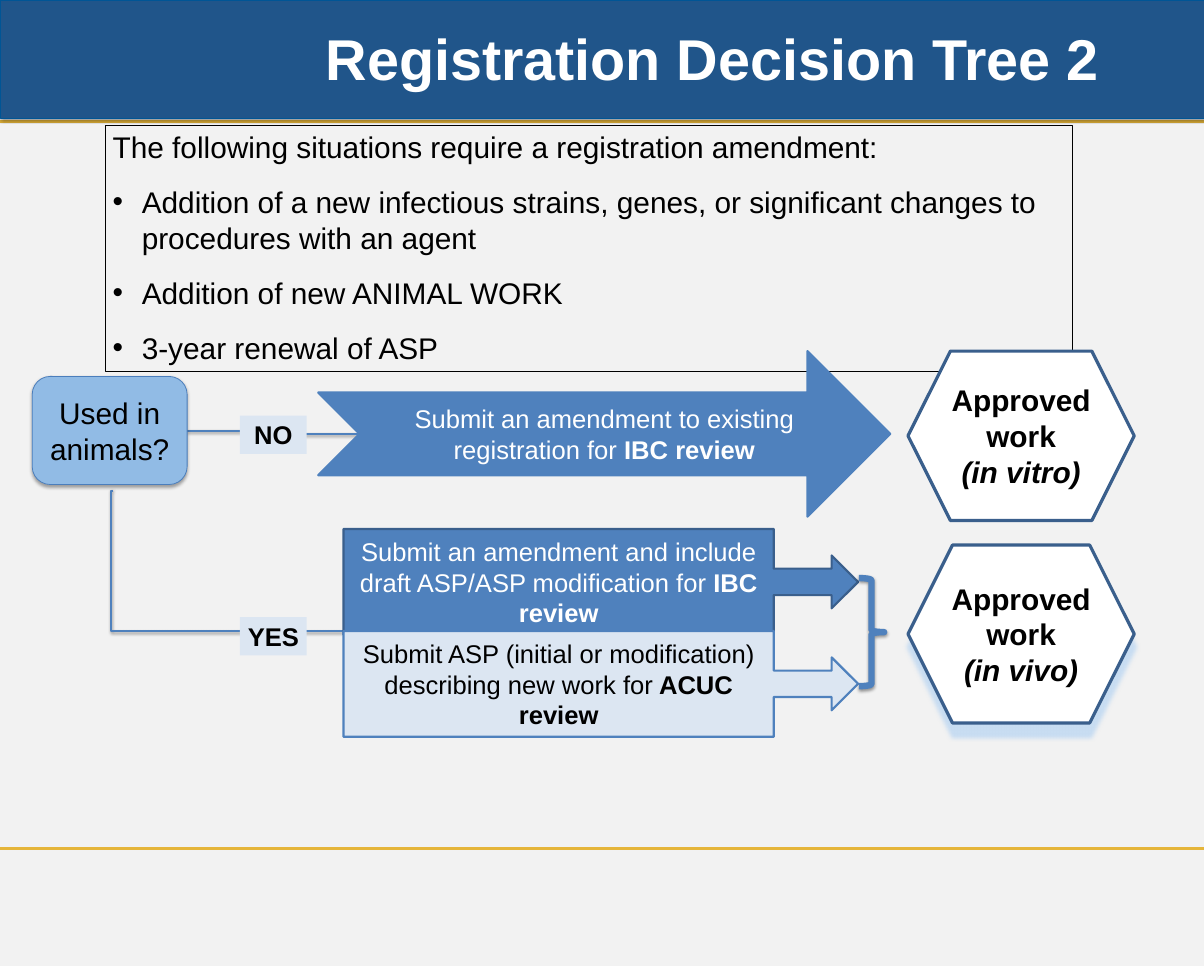
from lxml import etree
from pptx import Presentation
from pptx.dml.color import RGBColor
from pptx.enum import shapes, text
from pptx.oxml import ns
from pptx.util import Inches, Pt

KIND = shapes.MSO_SHAPE
CENTER = text.PP_ALIGN.CENTER
MIDDLE = text.MSO_ANCHOR.MIDDLE
BLUE, NAVY, PALE, GOLD = "4F81BD", "3A5F8C", "DCE6F2", "E5B53A"
SOFT = ("000000", 35, 3.1, 1.8)
LINE_SHADOW = ("000000", 38, 3.1, 1.6)
CALLOUT = (0.25, 0.25, 0.25, 0.836)


def rgb(code):
    return RGBColor.from_string(code)


def add_child(parent, tag, **attributes):
    child = etree.SubElement(parent, ns.qn(tag))
    for name, value in attributes.items():
        child.set(name, str(value))
    return child


def set_effects(item, shadow=None):
    """Give a shape its own effects: a downward (colour, opacity, blur, distance) or none."""
    effects = add_child(item._element.spPr, "a:effectLst")
    if shadow:
        color, opacity, blur, distance = shadow
        outer = add_child(effects, "a:outerShdw", blurRad=Pt(blur), dist=Pt(distance),
                          dir=5400000, algn="t", rotWithShape=0)
        add_child(add_child(outer, "a:srgbClr", val=color), "a:alpha", val=opacity * 1000)


def set_line(line, style):
    if style:
        line.color.rgb = rgb(style[0])
        line.width = Pt(style[1])
    else:
        line.fill.background()


def add_figure(page, kind, at, fill=None, line=None, shadow=None, adjustments=()):
    box = page.shapes.add_shape(kind, *map(Inches, at))
    if fill:
        box.fill.solid()
        box.fill.fore_color.rgb = rgb(fill)
    else:
        box.fill.background()
    set_line(box.line, line)
    for index, value in enumerate(adjustments):
        box.adjustments[index] = value
    set_effects(box, shadow)
    return box


def add_line(page, start, end, style, kind=shapes.MSO_CONNECTOR.STRAIGHT, shadow=None, bend=None):
    """Draw a connector; bend is the elbow's place as a share of its width."""
    line = page.shapes.add_connector(kind, *map(Inches, start + end))
    set_line(line.line, style)
    set_effects(line, shadow)
    if bend is not None:
        guides = line._element.spPr.prstGeom.get_or_add_avLst()
        add_child(guides, "a:gd", name="adj1", fmla=f"val {round(bend * 100000)}")


def write(box, paragraphs, size, color="000000", align=CENTER, anchor=MIDDLE, wrap=True):
    """Write paragraphs, each a list of (text, font format) spans."""
    frame = box.text_frame
    frame.word_wrap = wrap
    frame.vertical_anchor = anchor
    for index, spans in enumerate(paragraphs):
        para = frame.add_paragraph() if index else frame.paragraphs[0]
        para.alignment = align
        for words, style in spans:
            span = para.add_run()
            span.text = words
            span.font.color.rgb = rgb(color)
            for name, value in {"name": "Arial", "size": Pt(size), **style}.items():
                setattr(span.font, name, value)
    return frame.paragraphs


def add_bullet(para):
    properties = para._p.get_or_add_pPr()
    properties.set("marL", str(Inches(0.38)))
    properties.set("indent", str(-Inches(0.38)))
    add_child(properties, "a:buFont", typeface="Arial")
    add_child(properties, "a:buChar", char="•")


def add_header(page):
    add_line(page, (0, 1.59), (15.7, 1.59), (GOLD, 3))
    add_figure(page, KIND.RECTANGLE, (0, 0, 15.7, 1.54), "20558A", ("005595", 0.75), SOFT)
    add_line(page, (0, 11.07), (15.7, 11.07), (GOLD, 3))
    title = page.shapes.add_textbox(*map(Inches, (4.15, 0.25, 11.12, 1.01)))
    write(title, [[("Registration Decision Tree 2", {"bold": True})]], 54, "FFFFFF",
          text.PP_ALIGN.LEFT)


def add_situations(page):
    situations = (
        "The following situations require a registration amendment:",
        "Addition of a new infectious strains, genes, or significant changes to "
        "procedures with an agent",
        "Addition of new ANIMAL WORK",
        "3-year renewal of ASP",
    )
    box = add_figure(page, KIND.RECTANGLE, (1.37, 1.63, 12.62, 3.21), line=("000000", 0.75))
    paragraphs = write(box, [[(words, {})] for words in situations], 28,
                       align=text.PP_ALIGN.LEFT, anchor=text.MSO_ANCHOR.TOP)
    for para in paragraphs:
        para.space_after = Pt(18)
    for para in paragraphs[1:]:
        add_bullet(para)


def add_answer(page, words, top):
    box = add_figure(page, KIND.RECTANGLE, (3.13, top, 0.87, 0.5), PALE)
    write(box, [[(words, {"bold": True})]], 24, wrap=False)


def add_step(page, kind, at, fill, line, color, action, review, adjustments=()):
    box = add_figure(page, kind, at, fill, line, adjustments=adjustments)
    write(box, [[(action, {}), (review, {"bold": True})]], 24, color)


def add_outcome(page, top, height, setting, shadow=None):
    box = add_figure(page, KIND.HEXAGON, (11.84, top, 2.95, height), "FFFFFF", (NAVY, 3), shadow)
    write(box, [[("Approved work", {"bold": True})],
                [(setting, {"bold": True, "italic": True})]], 28)


def main():
    deck = Presentation()
    deck.slide_width, deck.slide_height = Inches(15.7), Inches(12.6)
    page = deck.slides.add_slide(deck.slide_layouts[6])
    page.background.fill.solid()
    page.background.fill.fore_color.rgb = rgb("F2F2F2")

    add_header(page)
    elbow = shapes.MSO_CONNECTOR.ELBOW
    add_line(page, (1.48, 6.4), (4.48, 8.23), (BLUE, 2), elbow, LINE_SHADOW, bend=-0.009)
    add_line(page, (2.44, 5.62), (4.69, 5.66), (BLUE, 2), elbow, LINE_SHADOW)
    add_situations(page)

    question = add_figure(page, KIND.ROUNDED_RECTANGLE, (0.42, 4.91, 2.02, 1.41),
                          "91BBE5", ("4B7EBC", 0.75), SOFT)
    write(question, [[("Used in animals?", {})]], 28)

    add_answer(page, "NO", 5.42)
    add_step(page, KIND.NOTCHED_RIGHT_ARROW, (4.15, 4.58, 7.46, 2.16), BLUE, (BLUE, 2), "FFFFFF",
             "Submit an amendment to existing registration for ", "IBC review")
    add_outcome(page, 4.58, 2.21, "(in vitro)")

    add_answer(page, "YES", 8.05)
    add_step(page, KIND.RIGHT_ARROW_CALLOUT, (4.48, 6.9, 6.71, 1.38), BLUE, (NAVY, 2), "FFFFFF",
             "Submit an amendment and include draft ASP/ASP modification for ", "IBC review",
             CALLOUT)
    add_step(page, KIND.RIGHT_ARROW_CALLOUT, (4.48, 8.23, 6.71, 1.38), PALE, (BLUE, 2), "000000",
             "Submit ASP (initial or modification) describing new work for", " ACUC review",
             CALLOUT)
    add_outcome(page, 7.11, 2.32, "(in vivo)", ("C8DDF2", 100, 4, 12))
    add_figure(page, KIND.RIGHT_BRACE, (11.2, 7.54, 0.33, 1.41), line=(BLUE, 6),
               shadow=LINE_SHADOW)
    deck.save("out.pptx")


if __name__ == "__main__":
    main()
